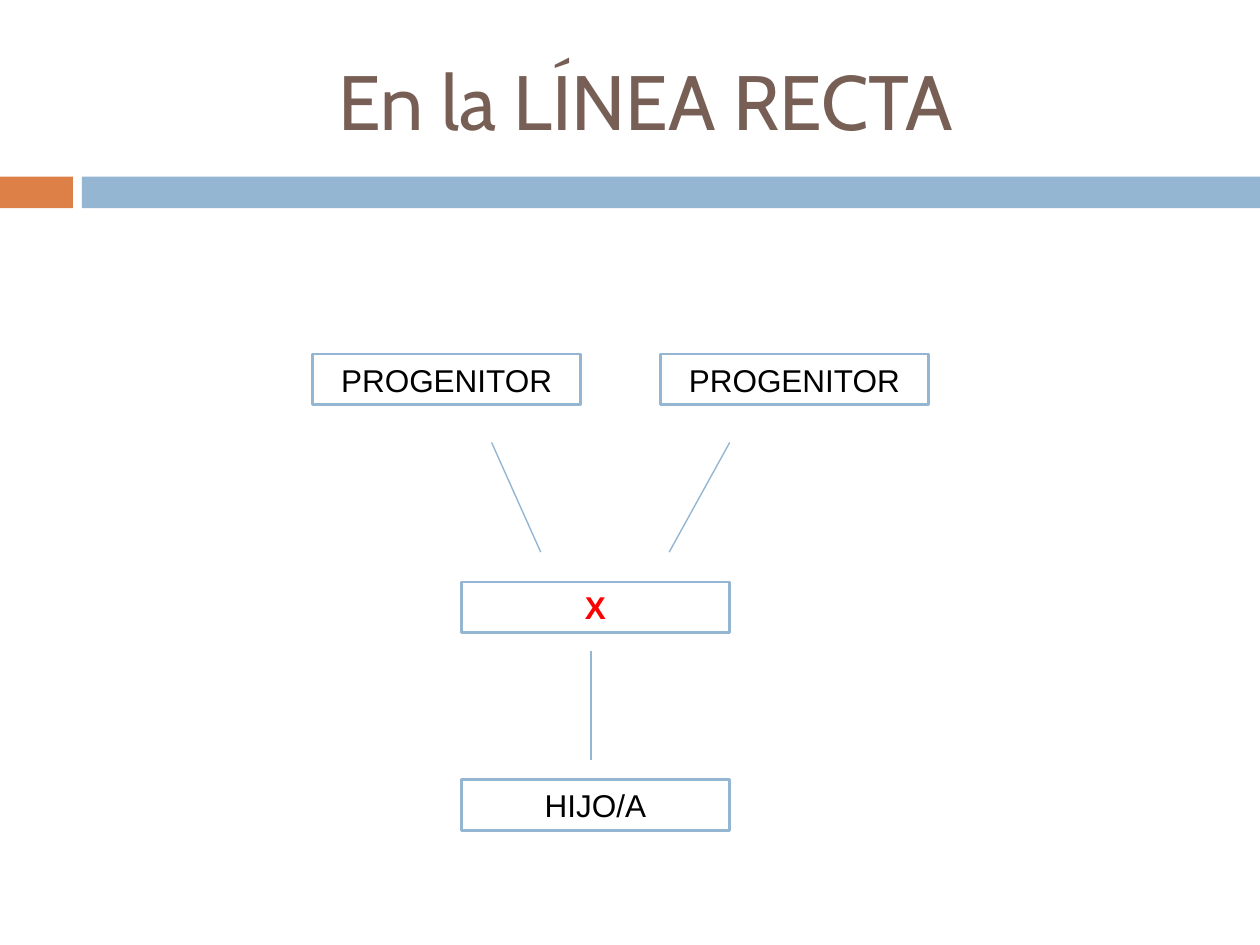
from typing import Any, NamedTuple

import pptx
import pptx.dml.color
import pptx.enum.shapes
import pptx.enum.text
import pptx.util
from lxml import etree
from pptx.oxml.ns import qn

Cm = pptx.util.Cm
Pt = pptx.util.Pt
RGBColor = pptx.dml.color.RGBColor

BLUE = RGBColor(0x94, 0xB6, 0xD2)
ORANGE = RGBColor(0xDD, 0x80, 0x47)
BROWN = RGBColor(0x77, 0x5F, 0x55)
BLACK = RGBColor(0, 0, 0)
RED = RGBColor(0xFF, 0, 0)


class Bar(NamedTuple):
    left: float
    width: float
    color: RGBColor


class Box(NamedTuple):
    left: float
    top: float
    text: str
    color: RGBColor = BLACK
    bold: bool = False


class Link(NamedTuple):
    x1: float
    y1: float
    x2: float
    y2: float


BARS = [Bar(0, 1.47, ORANGE), Bar(1.65, 23.75, BLUE)]
BOXES = [
    Box(6.3, 7.14, "PROGENITOR"),
    Box(13.31, 7.14, "PROGENITOR"),
    Box(9.3, 11.73, "X", RED, True),
    Box(9.3, 15.72, "HIJO/A"),
]
LINKS = [
    Link(11.91, 13.13, 11.91, 15.32),
    Link(9.91, 8.92, 10.9, 11.13),
    Link(14.71, 8.92, 13.49, 11.13),
]


def add_rect(slide: Any, left: float, top: float, width: float, height: float) -> Any:
    """Add a rectangle without a shadow."""
    kind = pptx.enum.shapes.MSO_SHAPE.RECTANGLE
    rect = slide.shapes.add_shape(kind, Cm(left), Cm(top), Cm(width), Cm(height))
    rect.shadow.inherit = False
    return rect


def set_text(shape: Any, text: str, font: str, size: int, color: RGBColor, bold: bool = False) -> None:
    """Write one centred line of text into a shape."""
    frame = shape.text_frame
    frame.word_wrap = True
    frame.vertical_anchor = pptx.enum.text.MSO_ANCHOR.MIDDLE
    line = frame.paragraphs[0]
    line.text = text
    line.alignment = pptx.enum.text.PP_ALIGN.CENTER
    line.font.name = font
    line.font.size = Pt(size)
    line.font.bold = bold
    line.font.color.rgb = color


def draw_bar(slide: Any, bar: Bar) -> None:
    """Draw one filled part of the band below the title."""
    rect = add_rect(slide, bar.left, 3.56, bar.width, 0.64)
    rect.fill.solid()
    rect.fill.fore_color.rgb = bar.color
    rect.line.fill.background()


def draw_box(slide: Any, box: Box) -> None:
    """Draw one outlined family member."""
    rect = add_rect(slide, box.left, box.top, 5.41, 1.02)
    rect.fill.background()
    rect.line.color.rgb = BLUE
    rect.line.width = Pt(1.5)
    set_text(rect, box.text, "Arial", 18, box.color, box.bold)


def draw_link(slide: Any, link: Link) -> None:
    """Draw one thin line between generations."""
    kind = pptx.enum.shapes.MSO_CONNECTOR.STRAIGHT
    line = slide.shapes.add_connector(kind, *(Cm(n) for n in link))
    line.line.color.rgb = BLUE
    line.line.width = Pt(0.79)
    etree.SubElement(line._element.spPr, qn("a:effectLst"))


def main() -> None:
    """Build the slide and save it."""
    deck = pptx.Presentation()
    deck.slide_width = Cm(25.4)
    deck.slide_height = Cm(19.05)
    slide = deck.slides.add_slide(deck.slide_layouts[6])
    for bar in BARS:
        draw_bar(slide, bar)
    title = slide.shapes.add_textbox(Cm(1.7), Cm(0.64), Cm(22.66), Cm(2.74))
    set_text(title, "En la LÍNEA RECTA", "Cabin", 44, BROWN)
    for box in BOXES:
        draw_box(slide, box)
    for link in LINKS:
        draw_link(slide, link)
    deck.save("out.pptx")


if __name__ == "__main__":
    main()
